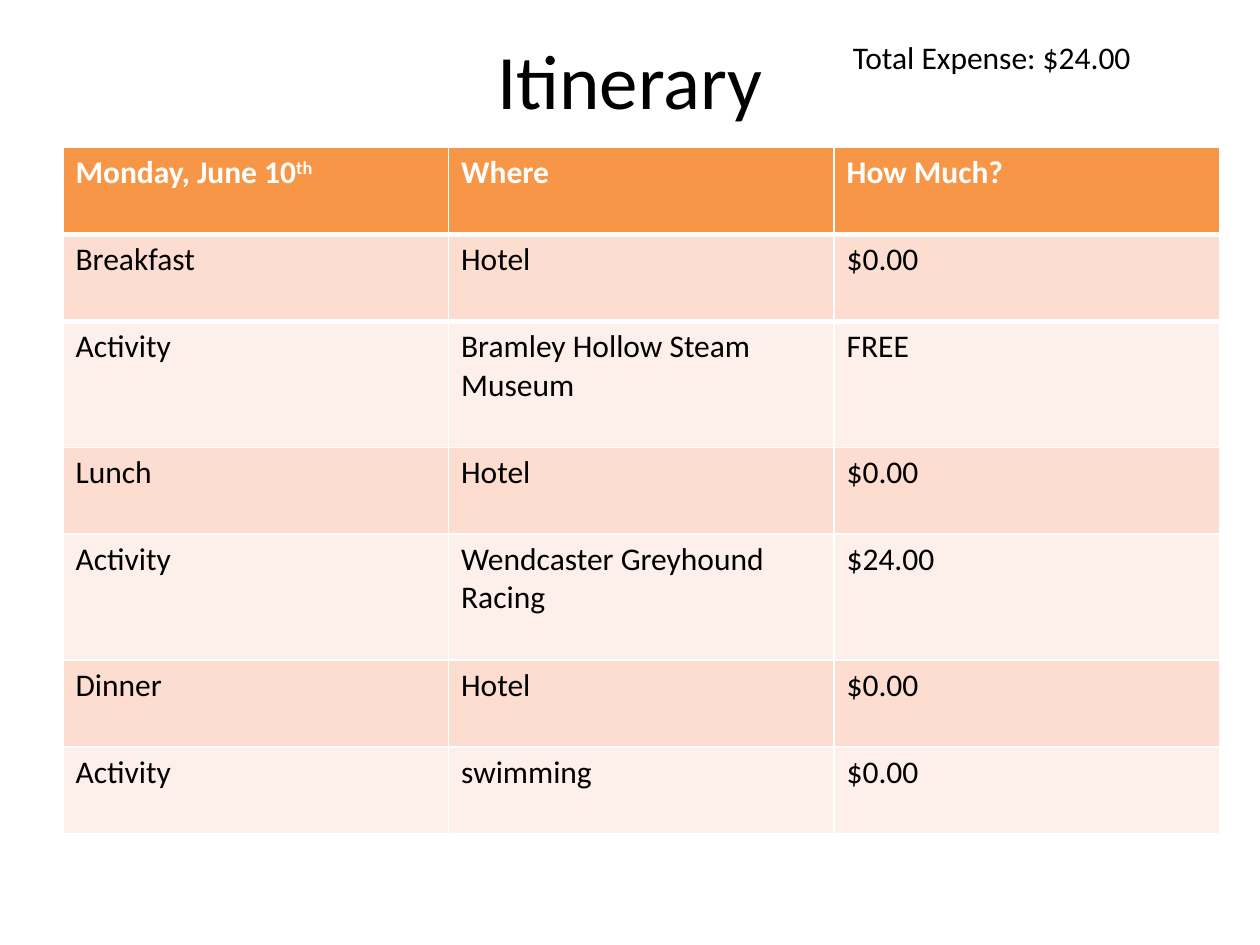
import lxml.etree
import pptx
import pptx.util
import pptx.dml.color
import pptx.enum.text
import pptx.oxml.ns

Inches = pptx.util.Inches
Pt = pptx.util.Pt
RGBColor = pptx.dml.color.RGBColor
qn = pptx.oxml.ns.qn

FONT = "Calibri"
BLACK = RGBColor(0x00, 0x00, 0x00)
WHITE = RGBColor(0xFF, 0xFF, 0xFF)
ORANGE = RGBColor(0xF7, 0x96, 0x46)
BANDS = (RGBColor(0xFC, 0xDD, 0xCF), RGBColor(0xFD, 0xEF, 0xE9))

HEADER = ("Monday, June 10", "Where", "How Much?")
PLAN = (
    ("Breakfast", "Hotel", "$0.00"),
    ("Activity", "Bramley Hollow Steam Museum", "FREE"),
    ("Lunch", "Hotel", "$0.00"),
    ("Activity", "Wendcaster Greyhound Racing", "$24.00"),
    ("Dinner", "Hotel", "$0.00"),
    ("Activity", "swimming", "$0.00"),
)
ROW_HEIGHTS = (0.69, 0.69, 1, 0.69, 1, 0.69, 0.69)
COLUMN_WIDTH = 3.06


def style(p, size, color=BLACK, bold=False):
    """Set the font of a paragraph."""
    p.font.name = FONT
    p.font.size = Pt(size)
    p.font.color.rgb = color
    p.font.bold = bold


def add_title(s, text):
    """Fill the title placeholder."""
    title = s.shapes.title
    title.left, title.top = Inches(0.5), Inches(0)
    title.width, title.height = Inches(9), Inches(1.25)
    tf = title.text_frame
    tf.text = text
    tf.vertical_anchor = pptx.enum.text.MSO_ANCHOR.MIDDLE
    p = tf.paragraphs[0]
    p.alignment = pptx.enum.text.PP_ALIGN.CENTER
    style(p, 44)


def add_total(s, text):
    """Add the total expense beside the title."""
    sp = s.shapes.add_textbox(Inches(6.67), Inches(0.25), Inches(3.08), Inches(0.4))
    tf = sp.text_frame
    tf.word_wrap = True
    tf.auto_size = pptx.enum.text.MSO_AUTO_SIZE.SHAPE_TO_FIT_TEXT
    tf.text = text
    style(tf.paragraphs[0], 18)


def fill_cell(cell, text, fill, color, bold):
    """Write and colour one table cell."""
    cell.fill.solid()
    cell.fill.fore_color.rgb = fill
    cell.text = text
    style(cell.text_frame.paragraphs[0], 18, color, bold)


def set_border(cell, side, width):
    """Draw one white border of a cell."""
    line = lxml.etree.Element(qn("a:" + side), w=str(Pt(width)))
    fill = lxml.etree.SubElement(line, qn("a:solidFill"))
    lxml.etree.SubElement(fill, qn("a:srgbClr"), val=str(WHITE))
    cell._tc.get_or_add_tcPr().insert(0, line)


def add_superscript(p, text):
    """Append a raised run to a paragraph."""
    r = p.add_run()
    r.text = text
    r._r.get_or_add_rPr().set("baseline", "30000")


def add_itinerary(s):
    """Add the table of the day's plan."""
    rows = (HEADER,) + PLAN
    table = s.shapes.add_table(
        len(rows), len(HEADER), Inches(0.5), Inches(1.17),
        Inches(COLUMN_WIDTH * len(HEADER)), Inches(sum(ROW_HEIGHTS)),
    ).table
    for column in table.columns:
        column.width = Inches(COLUMN_WIDTH)
    for i, (values, height) in enumerate(zip(rows, ROW_HEIGHTS)):
        table.rows[i].height = Inches(height)
        header = i == 0
        fill = ORANGE if header else BANDS[(i - 1) % 2]
        for j, text in enumerate(values):
            fill_cell(table.cell(i, j), text, fill, WHITE if header else BLACK, header)
    for j in range(len(HEADER)):
        set_border(table.cell(0, j), "lnB", 3)
        set_border(table.cell(1, j), "lnT", 3)
    add_superscript(table.cell(0, 0).text_frame.paragraphs[0], "th")


def main():
    """Build and save the itinerary slide."""
    prs = pptx.Presentation()
    prs.slide_width, prs.slide_height = Inches(10), Inches(7.5)
    s = prs.slides.add_slide(prs.slide_layouts[5])
    add_title(s, "Itinerary")
    add_total(s, "Total Expense: $24.00")
    add_itinerary(s)
    prs.save("out.pptx")


if __name__ == "__main__":
    main()
